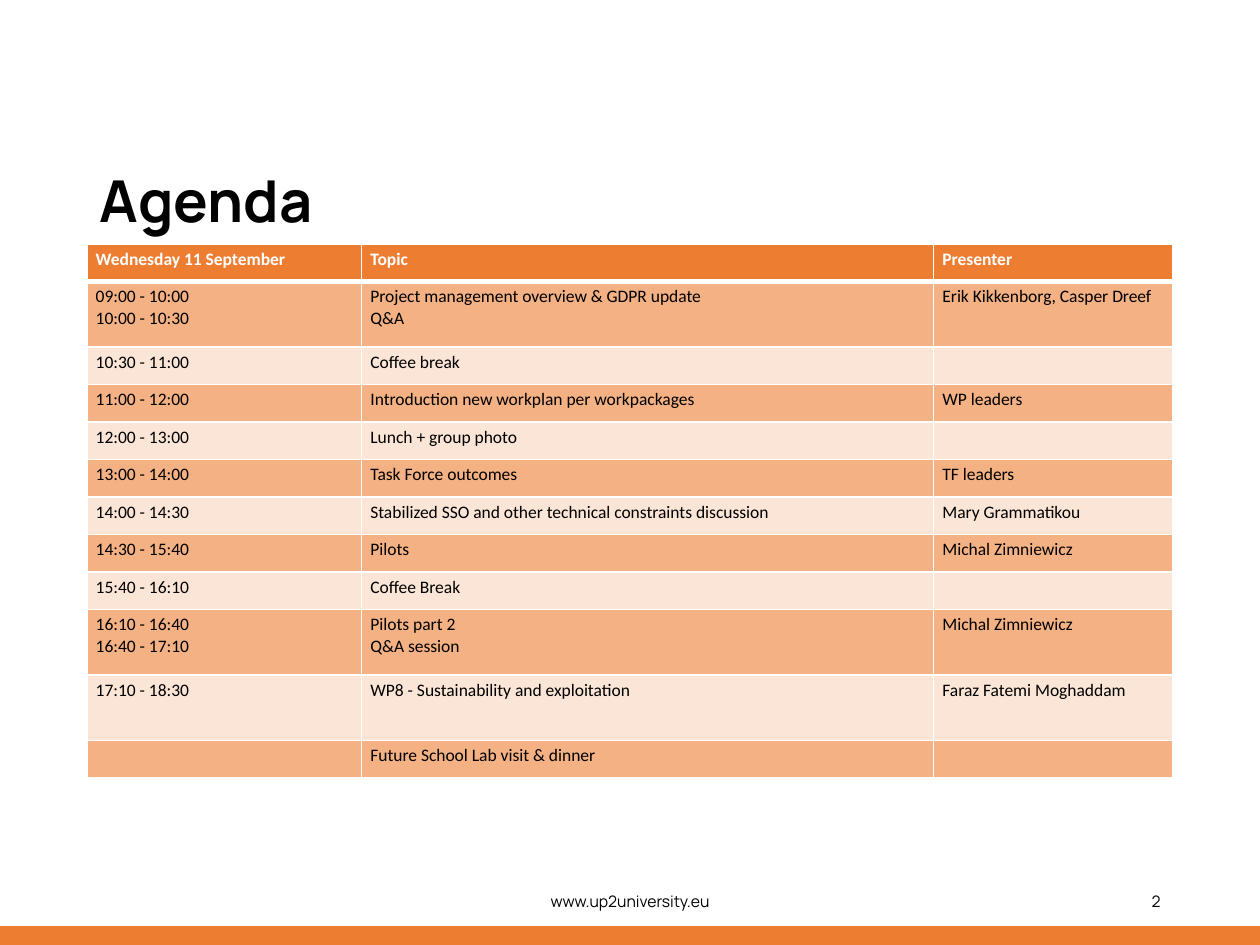
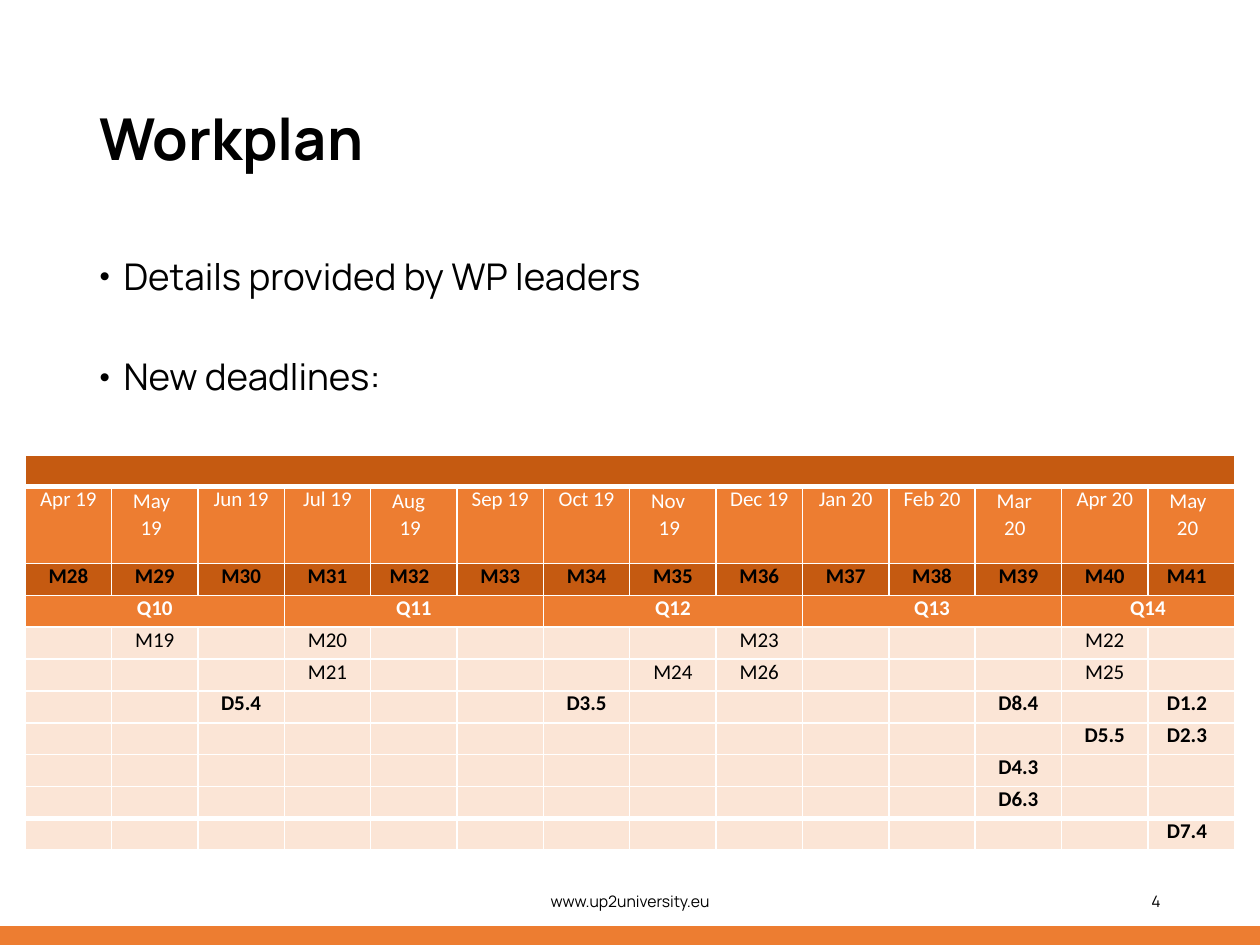
from dataclasses import dataclass

from lxml import etree
from pptx import Presentation
from pptx import util as u
from pptx.dml.color import RGBColor
from pptx.enum import shapes, text
from pptx.oxml.ns import qn

COLORS = {
    "accent": "ED7D31",
    "dark": "C55A11",
    "band": "F4B183",
    "pale": "FBE5D6",
    "white": "FFFFFF",
    "black": "000000",
}
SLIDE_WIDTH, SLIDE_HEIGHT = u.Inches(10), u.Inches(7.5)
COLUMN, ROW = SLIDE_WIDTH / 100, SLIDE_HEIGHT / 75
LEFT, CENTER, RIGHT = text.PP_ALIGN.LEFT, text.PP_ALIGN.CENTER, text.PP_ALIGN.RIGHT
HEADING_FONT, TABLE_FONT = "Manrope", "Calibri"
THIN, THICK = 1, 3
WEBSITE = "www.up2university.eu"


@dataclass(frozen=True)
class Box:
    """An area measured in grid columns and rows."""
    left: float
    top: float
    width: float
    height: float

    def lengths(self) -> tuple[int, int, int, int]:
        return (round(self.left * COLUMN), round(self.top * ROW),
                round(self.width * COLUMN), round(self.height * ROW))


@dataclass(frozen=True)
class CellStyle:
    fill: str
    color: str = "black"
    size: float = 12
    bold: bool = False
    align: text.PP_ALIGN = CENTER
    margins: tuple[float, float] = (0, 0)
    left: float = 0
    first: float = 0
    right: float = 0
    line_spacing: float = 1


BAND = Box(0, 73.5, 100, 1.5)
WEBSITE_BOX = Box(33.1, 69.5, 33.8, 4)
NUMBER_BOX = Box(70.6, 69.5, 22.5, 4)

AGENDA_BOX = Box(6.9, 19.35, 86.2, 42.4)
AGENDA_COLUMNS = [21.8, 45.4, 19]
TALL_ROW = 5.2
TALL_ROWS = {1, 9, 10}
AGENDA = [
    ("Wednesday 11 September", "Topic", "Presenter"),
    ("09:00 - 10:00\n10:00 - 10:30", "Project management overview & GDPR update\nQ&A",
     "Erik Kikkenborg, Casper Dreef"),
    ("10:30 - 11:00", "Coffee break", ""),
    ("11:00 - 12:00", "Introduction new workplan per workpackages", "WP leaders"),
    ("12:00 - 13:00", "Lunch + group photo", ""),
    ("13:00 - 14:00", "Task Force outcomes", "TF leaders"),
    ("14:00 - 14:30", "Stabilized SSO and other technical constraints discussion",
     "Mary Grammatikou"),
    ("14:30 - 15:40", "Pilots", "Michal Zimniewicz"),
    ("15:40 - 16:10", "Coffee Break", ""),
    ("16:10 - 16:40\n16:40 - 17:10", "Pilots part 2\nQ&A session", "Michal Zimniewicz"),
    ("17:10 - 18:30", "WP8 - Sustainability and exploitation", "Faraz Fatemi Moghaddam"),
    ("", "Future School Lab visit & dinner", ""),
]

WORKPLAN_BOX = Box(2, 36.1, 96, 31.4)
MONTHS = ["Apr 19", "May 19", "Jun 19", "Jul 19", "Aug 19", "Sep 19", "Oct 19",
          "Nov 19", "Dec 19", "Jan 20", "Feb 20", "Mar 20", "Apr 20", "May 20"]
WRAPPED_MONTHS = ("May", "Aug", "Nov", "Mar")
FIRST_MONTH, FIRST_QUARTER = 28, 10
MONTHS_PER_QUARTER = 3
INDENTED_MONTHS = {32, 41}
DEADLINES = [
    {29: "M19", 31: "M20", 36: "M23", 40: "M22"},
    {31: "M21", 35: "M24", 36: "M26", 40: "M25"},
    {30: "D5.4", 34: "D3.5", 39: "D8.4", 41: "D1.2"},
    {40: "D5.5", 41: "D2.3"},
    {39: "D4.3"},
    {39: "D6.3"},
    {41: "D7.4"},
]


def rgb(name: str) -> RGBColor:
    return RGBColor.from_string(COLORS[name])


def write(frame, content: str, *, size: float, font: str = HEADING_FONT,
          color: str = "black", bold: bool = False, align=LEFT,
          line_spacing: float = 1, gap: float = 0, left: float = 0,
          first: float = 0, right: float = 0, bullet: str = "") -> None:
    """Fill a text frame, one paragraph per line; indents are in inches."""
    for index, line in enumerate(content.split("\n")):
        paragraph = frame.add_paragraph() if index else frame.paragraphs[0]
        paragraph.alignment = align
        paragraph.line_spacing = line_spacing
        paragraph.space_before = u.Pt(gap if index else 0)
        properties = paragraph._p.get_or_add_pPr()
        for name, length in (("marL", left), ("indent", first), ("marR", right)):
            properties.set(name, str(u.Inches(length)))
        if bullet:
            etree.SubElement(properties, qn("a:buSzPct"), val="80000")
            etree.SubElement(properties, qn("a:buChar"), char=bullet)
        if not line:
            etree.SubElement(paragraph._p, qn("a:endParaRPr"), sz=str(size * 100))
            continue
        run = paragraph.add_run()
        run.text = line
        run.font.size, run.font.name, run.font.bold = u.Pt(size), font, bold
        run.font.color.rgb = rgb(color)


def place(shape, box: Box) -> None:
    shape.left, shape.top, shape.width, shape.height = box.lengths()


def add_footer_text(slide, box: Box, content: str, align) -> None:
    frame = slide.shapes.add_textbox(*box.lengths()).text_frame
    frame.word_wrap = True
    frame.vertical_anchor = text.MSO_ANCHOR.MIDDLE
    write(frame, content, size=9, align=align)


def add_page(presentation, layout: str, title: str, title_box: Box, number: int):
    """Add a slide with the title, band and footer that all slides share."""
    slide = presentation.slides.add_slide(presentation.slide_layouts.get_by_name(layout))
    band = slide.shapes.add_shape(shapes.MSO_SHAPE.RECTANGLE, *BAND.lengths())
    band.shadow.inherit = False
    band.fill.solid()
    band.fill.fore_color.rgb = rgb("accent")
    band.line.fill.background()
    heading = slide.shapes.title
    place(heading, title_box)
    heading.text_frame.auto_size = text.MSO_AUTO_SIZE.NONE
    heading.text_frame.vertical_anchor = text.MSO_ANCHOR.MIDDLE
    write(heading.text_frame, title, size=33, bold=True, line_spacing=0.9)
    add_footer_text(slide, WEBSITE_BOX, WEBSITE, CENTER)
    add_footer_text(slide, NUMBER_BOX, str(number), RIGHT)
    return slide


def add_grid(slide, box: Box, columns: list[float], rows: list[float]):
    table = slide.shapes.add_table(len(rows), len(columns), *box.lengths()).table
    table.first_row = table.horz_banding = False
    for column, width in zip(table.columns, columns):
        column.width = round(width * COLUMN)
    for row, height in zip(table.rows, rows):
        row.height = round(height * ROW)
    return table


def set_borders(cell, top: int, bottom: int) -> None:
    properties = cell._tc.get_or_add_tcPr()
    for side, width in (("L", THIN), ("R", THIN), ("T", top), ("B", bottom)):
        line = etree.SubElement(properties, qn(f"a:ln{side}"), w=str(u.Pt(width)))
        fill = etree.SubElement(line, qn("a:solidFill"))
        etree.SubElement(fill, qn("a:srgbClr"), val=COLORS["white"])


def fill_grid(table, contents, style_of, thick_edges: set[int]) -> None:
    """Write and style every cell; thick_edges are rows with a thick upper edge."""
    for r, line in enumerate(contents):
        top, bottom = (THICK if edge in thick_edges else THIN for edge in (r, r + 1))
        for c, content in enumerate(line):
            cell, style = table.cell(r, c), style_of(r, c, content)
            set_borders(cell, top, bottom)
            cell.fill.solid()
            cell.fill.fore_color.rgb = rgb(style.fill)
            side, end = style.margins
            cell.margin_left = cell.margin_right = u.Inches(side)
            cell.margin_top = cell.margin_bottom = u.Inches(end)
            write(cell.text_frame, content, size=style.size, font=TABLE_FONT,
                  color=style.color, bold=style.bold, align=style.align,
                  left=style.left, first=style.first, right=style.right,
                  line_spacing=style.line_spacing)


def agenda_style(row: int, column: int, content: str) -> CellStyle:
    header = row == 0
    fill = "accent" if header else "band" if row % 2 else "pale"
    return CellStyle(fill, "white" if header else "black", 10, header, LEFT, (0.07, 0.04))


def workplan_style(row: int, column: int, content: str) -> CellStyle:
    if row == 0:
        return CellStyle("dark")
    if row == 1:
        if content.startswith(WRAPPED_MONTHS):
            return CellStyle("accent", "white", align=LEFT, left=0.23, first=-0.06,
                             right=0.15, line_spacing=1.06)
        return CellStyle("accent", "white")
    if row == 3:
        return CellStyle("accent", "white", bold=True)
    fill = "dark" if row == 2 else "pale"
    bold = row == 2 or content.startswith("D")
    if FIRST_MONTH + column in INDENTED_MONTHS:
        return CellStyle(fill, bold=bold, align=LEFT, left=0.15)
    return CellStyle(fill, bold=bold)


def build_agenda(presentation) -> None:
    slide = add_page(presentation, "Title Only", "Agenda", Box(6.9, 12.4, 86.2, 7.5), 2)
    short_row = ((AGENDA_BOX.height - TALL_ROW * len(TALL_ROWS))
                 / (len(AGENDA) - len(TALL_ROWS)))
    rows = [TALL_ROW if r in TALL_ROWS else short_row for r in range(len(AGENDA))]
    table = add_grid(slide, AGENDA_BOX, AGENDA_COLUMNS, rows)
    fill_grid(table, AGENDA, agenda_style, {1})


def build_workplan(presentation) -> None:
    slide = add_page(presentation, "Title and Content", "Workplan",
                     Box(6.9, 4, 75.6, 14.5), 4)
    body = slide.placeholders[1]
    place(body, Box(6.9, 20, 86.2, 47.6))
    body.text_frame.auto_size = text.MSO_AUTO_SIZE.NONE
    write(body.text_frame, "Details provided by WP leaders\nNew deadlines:", size=21,
          line_spacing=0.9, gap=35, left=0.19, first=-0.19, bullet="•")

    count = len(MONTHS)
    numbers = range(FIRST_MONTH, FIRST_MONTH + count)
    quarters = ["" if c % MONTHS_PER_QUARTER else f"Q{FIRST_QUARTER + c // MONTHS_PER_QUARTER}"
                for c in range(count)]
    contents = [[""] * count, MONTHS, [f"M{number}" for number in numbers], quarters]
    contents += [[due.get(number, "") for number in numbers] for due in DEADLINES]

    month_row = 6.1
    plain_row = (WORKPLAN_BOX.height - month_row) / (len(contents) - 1)
    rows = [month_row if r == 1 else plain_row for r in range(len(contents))]
    table = add_grid(slide, WORKPLAN_BOX, [WORKPLAN_BOX.width / count] * count, rows)
    fill_grid(table, contents, workplan_style, {1, len(contents) - 1})
    table.cell(0, 0).merge(table.cell(0, count - 1))
    for start in range(0, count, MONTHS_PER_QUARTER):
        end = min(start + MONTHS_PER_QUARTER, count) - 1
        table.cell(3, start).merge(table.cell(3, end))


def main() -> None:
    presentation = Presentation()
    presentation.slide_width, presentation.slide_height = SLIDE_WIDTH, SLIDE_HEIGHT
    build_agenda(presentation)
    build_workplan(presentation)
    presentation.save("out.pptx")


if __name__ == "__main__":
    main()
